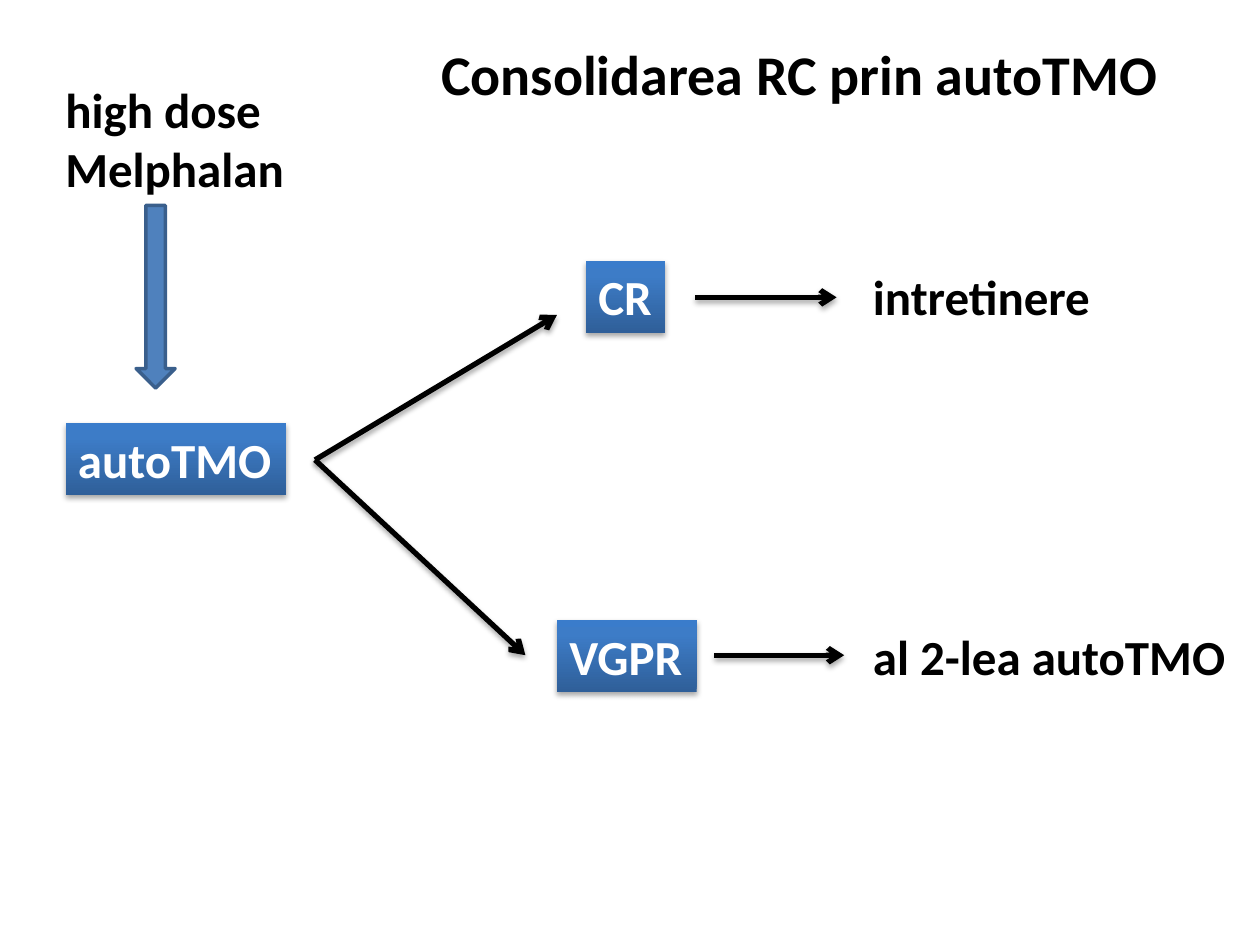
from copy import deepcopy
from dataclasses import dataclass

from lxml.etree import SubElement
from pptx import Presentation
from pptx.dml.color import RGBColor
from pptx.enum.shapes import MSO_CONNECTOR as CONN, MSO_SHAPE as SHAPE
from pptx.enum.text import MSO_ANCHOR as ANCHOR, MSO_AUTO_SIZE as AUTO, PP_ALIGN as ALIGN
from pptx.oxml import parse_xml
from pptx.oxml.ns import nsdecls, qn
from pptx.util import Pt

PX = 9144  # 100 px to the inch
FONT = "Calibri"
BLACK, WHITE = "000000", "FFFFFF"
BOX_STOPS = [(0, "2F5F99"), (0.8, "3D7CC7"), (1, "3A7CCB")]
SHADOW = (
    f'<a:effectLst {nsdecls("a")}>'
    '<a:outerShdw blurRad="40000" dist="23000" dir="5400000" rotWithShape="0">'
    '<a:srgbClr val="000000"><a:alpha val="35000"/></a:srgbClr>'
    '</a:outerShdw></a:effectLst>'
)


@dataclass
class Label:
    text: str
    x: int
    y: int
    w: int
    h: int = 57


@dataclass
class Arrow:
    x1: int
    y1: int
    x2: int
    y2: int


CR_TOP, VGPR_TOP = 207, 492
FORK_X, FORK_Y = 250, 365

TITLE = Label("Consolidarea RC prin autoTMO", 340, 26, 604, 64)
BOXES = [
    Label("autoTMO", 52, 336, 175),
    Label("CR", 465, CR_TOP, 63),
    Label("VGPR", 442, VGPR_TOP, 111),
]
NOTES = [
    Label("high dose\nMelphalan", 42, 58, 196, 104),
    Label("intretinere", 683, CR_TOP, 195),
    Label("al 2-lea autoTMO", 683, VGPR_TOP, 303),
]
ARROWS = [
    Arrow(FORK_X, FORK_Y, 442, 250),
    Arrow(FORK_X, FORK_Y, 417, 520),
    Arrow(552, 236, 664, 236),
    Arrow(567, 520, 670, 520),
]


def rgb(value: str) -> RGBColor:
    return RGBColor.from_string(value)


def place(label: Label) -> list[int]:
    return [v * PX for v in (label.x, label.y, label.w, label.h)]


def add_shadow(sp) -> None:
    spPr = sp._element.spPr
    for old in spPr.findall(qn("a:effectLst")):
        spPr.remove(old)
    spPr.append(parse_xml(SHADOW))


def set_text(sp, text: str, color: str, size: int = 28) -> None:
    tf = sp.text_frame
    tf.text = text
    tf.word_wrap = False
    tf.auto_size = AUTO.SHAPE_TO_FIT_TEXT
    tf.vertical_anchor = ANCHOR.TOP
    for p in tf.paragraphs:
        p.alignment = ALIGN.LEFT
        for r in p.runs:
            r.font.name, r.font.size, r.font.bold = FONT, Pt(size), True
            r.font.color.rgb = rgb(color)


def draw_title(slide, label: Label) -> None:
    sp = slide.shapes.title
    sp.left, sp.top, sp.width, sp.height = place(label)
    set_text(sp, label.text, BLACK, 32)


def draw_note(slide, label: Label) -> None:
    set_text(slide.shapes.add_textbox(*place(label)), label.text, BLACK)


def draw_box(slide, label: Label) -> None:
    sp = slide.shapes.add_shape(SHAPE.RECTANGLE, *place(label))
    sp.fill.gradient()
    sp.fill.gradient_angle = 90
    # The default gradient has two stops; this one needs a third
    stops = sp._element.spPr.find(qn("a:gradFill")).find(qn("a:gsLst"))
    stops.append(deepcopy(stops[0]))
    for stop, (position, color) in zip(sp.fill.gradient_stops, BOX_STOPS):
        stop.position = position
        stop.color.rgb = rgb(color)
    sp.line.fill.background()
    add_shadow(sp)
    set_text(sp, label.text, WHITE)


def draw_arrow(slide, a: Arrow) -> None:
    ends = [v * PX for v in (a.x1, a.y1, a.x2, a.y2)]
    line = slide.shapes.add_connector(CONN.STRAIGHT, *ends)
    line.line.width = Pt(3)
    line.line.color.rgb = rgb(BLACK)
    SubElement(line.line._get_or_add_ln(), qn("a:tailEnd"), type="arrow")
    add_shadow(line)


def draw_dose_arrow(slide) -> None:
    sp = slide.shapes.add_shape(SHAPE.DOWN_ARROW, 108 * PX, 163 * PX, 31 * PX, 145 * PX)
    sp.shadow.inherit = False
    sp.fill.solid()
    sp.fill.fore_color.rgb = rgb("4F81BD")
    sp.line.color.rgb = rgb("3A5F8C")
    sp.line.width = Pt(2)


def main() -> None:
    prs = Presentation()
    prs.slide_width, prs.slide_height = 1000 * PX, 750 * PX
    slide = prs.slides.add_slide(prs.slide_layouts[5])  # title only

    draw_title(slide, TITLE)
    # Treatment steps and their outcomes
    for label in NOTES:
        draw_note(slide, label)
    for label in BOXES:
        draw_box(slide, label)
    # Flow between the steps
    draw_dose_arrow(slide)
    for arrow in ARROWS:
        draw_arrow(slide, arrow)

    prs.save("out.pptx")


if __name__ == "__main__":
    main()
